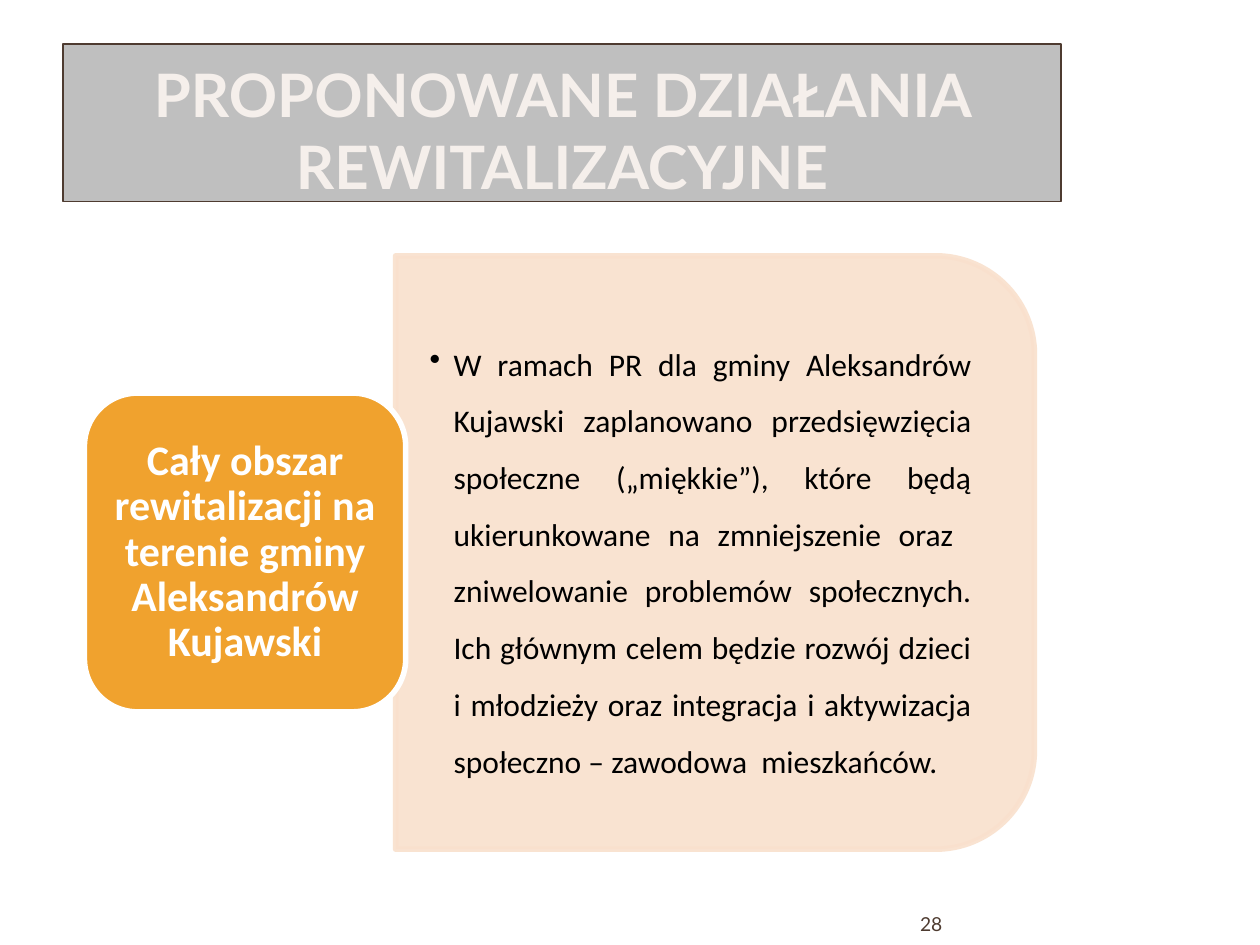
import pptx
import pptx.util
import pptx.dml.color
import pptx.enum.shapes
import pptx.enum.text
import pptx.oxml.ns
from lxml import etree

Inches, Pt = pptx.util.Inches, pptx.util.Pt
RGBColor = pptx.dml.color.RGBColor
MSO_SHAPE = pptx.enum.shapes.MSO_SHAPE
PP_ALIGN = pptx.enum.text.PP_ALIGN
MSO_ANCHOR = pptx.enum.text.MSO_ANCHOR
qn = pptx.oxml.ns.qn

GREY = RGBColor(0xBF, 0xBF, 0xBF)
BROWN = RGBColor(0x4E, 0x3B, 0x30)
CREAM = RGBColor(0xF5, 0xEF, 0xEB)
PEACH = RGBColor(0xF9, 0xE0, 0xCD)
ORANGE = RGBColor(0xF0, 0xA2, 0x2E)
WHITE = RGBColor(0xFF, 0xFF, 0xFF)
BLACK = RGBColor(0, 0, 0)


def set_frame(shape, anchor, side, top):
    """Fix the margins and anchor of a text frame and return its first paragraph."""
    frame = shape.text_frame
    frame.word_wrap = True
    frame.auto_size = pptx.enum.text.MSO_AUTO_SIZE.NONE
    frame.vertical_anchor = anchor
    frame.margin_left = frame.margin_right = Inches(side)
    frame.margin_top = frame.margin_bottom = Inches(top)
    return frame.paragraphs[0]


def write(paragraph, text, align, font_name, size, color, bold=False):
    paragraph.text = text
    paragraph.alignment = align
    font = paragraph.font
    font.name, font.size, font.bold = font_name, Pt(size), bold
    font.color.rgb = color


prs = pptx.Presentation()
prs.slide_width, prs.slide_height = Inches(10), Inches(7.5)
slide = prs.slides.add_slide(prs.slide_layouts[5])

# Title band
title = slide.shapes.title
title.left, title.top = Inches(0.5), Inches(0.35)
title.width, title.height = Inches(7.92), Inches(1.25)
title.fill.solid()
title.fill.fore_color.rgb = GREY
title.line.color.rgb = BROWN
title.line.width = Pt(0.75)
write(set_frame(title, MSO_ANCHOR.BOTTOM, 0.05, 0),
      "PROPONOWANE DZIAŁANIA REWITALIZACYJNE",
      PP_ALIGN.CENTER, "Lato", 34.2, CREAM, True)

# Description panel, turned so that its round corners face right
panel = slide.shapes.add_shape(MSO_SHAPE.ROUND_2_SAME_RECTANGLE, Inches(3.32),
                               Inches(1.85), Inches(4.71), Inches(5.07))
panel.rotation = 90
panel.shadow.inherit = False
panel.fill.solid()
panel.fill.fore_color.rgb = PEACH
panel.line.color.rgb = PEACH
panel.line.width = Pt(3.15)
for color in panel._element.spPr.iter(qn("a:srgbClr")):
    etree.SubElement(color, qn("a:alpha"), val="90000")

# Description text
description = slide.shapes.add_textbox(Inches(3.14), Inches(2.26), Inches(4.84), Inches(4.25))
paragraph = set_frame(description, MSO_ANCHOR.MIDDLE, 0.27, 0.14)
paragraph.line_spacing = 1.5
properties = paragraph._p.get_or_add_pPr()
properties.set("marL", str(Inches(0.19)))
properties.set("indent", str(-Inches(0.19)))
etree.SubElement(properties, qn("a:buChar"), char="•")
write(paragraph,
      "W ramach PR dla gminy Aleksandrów Kujawski zaplanowano przedsięwzięcia "
      "społeczne („miękkie”), które będą ukierunkowane na zmniejszenie oraz  "
      "zniwelowanie problemów społecznych. Ich głównym celem będzie rozwój dzieci "
      "i młodzieży oraz integracja i aktywizacja społeczno – zawodowa  mieszkańców.",
      PP_ALIGN.JUSTIFY, "Calibri", 18, BLACK)

# Area label
area = slide.shapes.add_shape(MSO_SHAPE.ROUNDED_RECTANGLE, Inches(0.67), Inches(3.12),
                              Inches(2.55), Inches(2.53))
area.shadow.inherit = False
area.fill.solid()
area.fill.fore_color.rgb = ORANGE
area.line.color.rgb = WHITE
area.line.width = Pt(3.15)
paragraph = set_frame(area, MSO_ANCHOR.MIDDLE, 0.1, 0.05)
paragraph.line_spacing = 0.9
write(paragraph, "Cały obszar rewitalizacji na terenie gminy Aleksandrów Kujawski",
      PP_ALIGN.CENTER, "Calibri", 24, WHITE, True)

# Page number
page_number = slide.shapes.add_textbox(Inches(6.84), Inches(7.17), Inches(0.64), Inches(0.25))
write(set_frame(page_number, MSO_ANCHOR.BOTTOM, 0, 0), "28",
      PP_ALIGN.RIGHT, "Lato", 11, BROWN)

prs.save("out.pptx")
